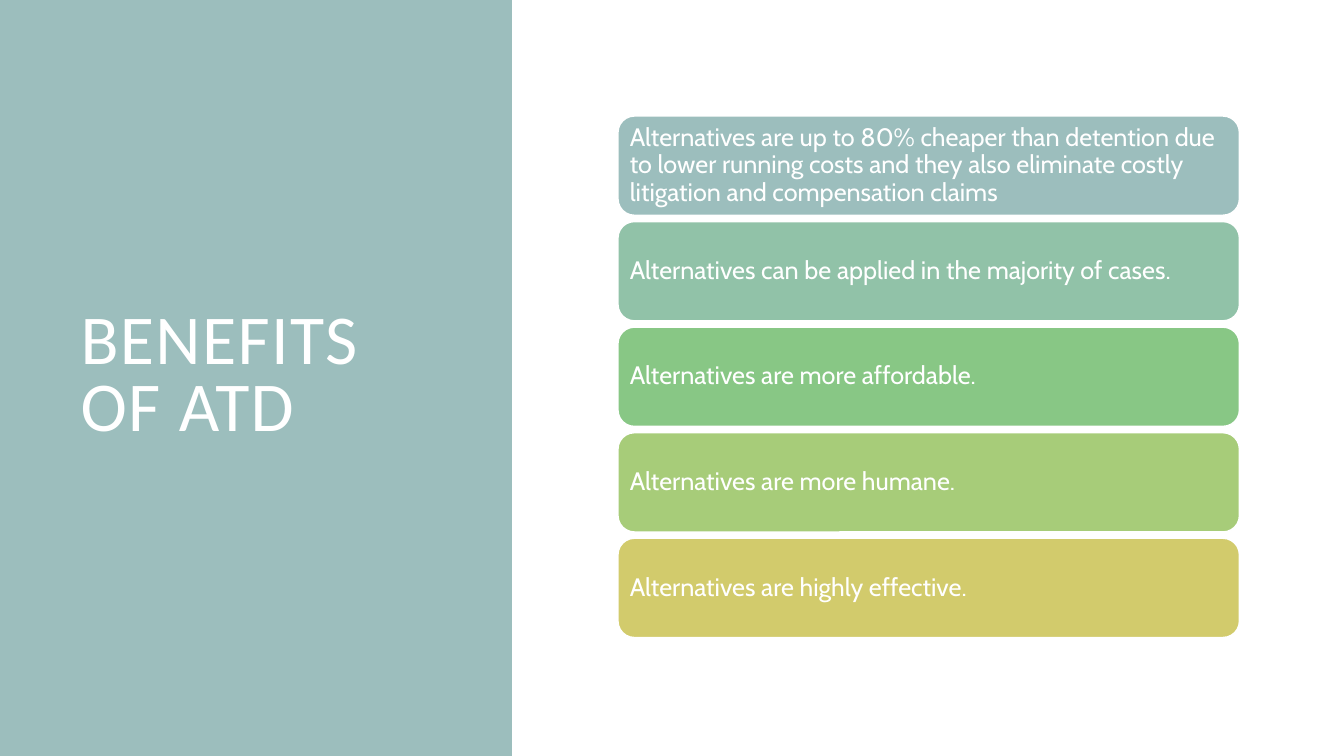
from pptx import Presentation
from pptx.dml.color import RGBColor
from pptx.enum.shapes import MSO_SHAPE
from pptx.enum.text import MSO_ANCHOR, PP_ALIGN
from pptx.util import Cm, Pt

WHITE = "FFFFFF"
TEAL = "9CBEBD"
BENEFITS = [
    ("Alternatives are up to 80% cheaper than detention due to lower running costs "
     "and they also eliminate costly litigation and compensation claims", TEAL),
    ("Alternatives can be applied in the majority of cases.", "91C2A8"),
    ("Alternatives are more affordable.", "88C785"),
    ("Alternatives are more humane.", "A7CC79"),
    ("Alternatives are highly effective.", "D2CB6C"),
]
CARD_TOP = 2.92
CARD_PITCH = 2.66


def color(hex_value):
    """Return the colour for a hex string."""
    return RGBColor.from_string(hex_value)


def add_block(slide, kind, left, top, width, height, fill):
    """Add a filled preset shape without line or shadow."""
    shape = slide.shapes.add_shape(kind, Cm(left), Cm(top), Cm(width), Cm(height))
    shape.shadow.inherit = False
    shape.fill.solid()
    shape.fill.fore_color.rgb = color(fill)
    shape.line.fill.background()
    return shape


def write_text(shape, text, font_name, size, line_spacing):
    """Write one white, left-aligned run, vertically centred in the shape."""
    frame = shape.text_frame
    frame.word_wrap = True
    frame.vertical_anchor = MSO_ANCHOR.MIDDLE
    paragraph = frame.paragraphs[0]
    paragraph.alignment = PP_ALIGN.LEFT
    paragraph.line_spacing = line_spacing
    run = paragraph.add_run()
    run.text = text
    run.font.name = font_name
    run.font.size = Pt(size)
    run.font.color.rgb = color(WHITE)
    return run


def add_title(slide, text):
    """Add the letter-spaced title on the side panel."""
    box = slide.shapes.add_textbox(Cm(1.78), Cm(1.78), Cm(9.5), Cm(15.47))
    run = write_text(box, text, "Calibri", 50, 0.8)
    run.font._element.set("spc", "100")


def add_card(slide, top, text, fill):
    """Add one rounded benefit card with a white outline."""
    card = add_block(slide, MSO_SHAPE.ROUNDED_RECTANGLE, 15.57, top, 15.67, 2.51, fill)
    card.line.color.rgb = color(WHITE)
    card.line.width = Pt(1.25)
    frame = card.text_frame
    frame.margin_left = frame.margin_right = Cm(0.18)
    frame.margin_top = frame.margin_bottom = Cm(0.18)
    write_text(card, text, "Cabin", 18, 0.9)


def main():
    """Build and save the slide."""
    presentation = Presentation()
    presentation.slide_width = Cm(33.87)
    presentation.slide_height = Cm(19.05)
    slide = presentation.slides.add_slide(presentation.slide_layouts[6])
    add_block(slide, MSO_SHAPE.RECTANGLE, 0, 0, 12.9, 19.05, TEAL)
    add_title(slide, "BENEFITS OF ATD")
    for index, (text, fill) in enumerate(BENEFITS):
        add_card(slide, CARD_TOP + index * CARD_PITCH, text, fill)
    presentation.save("out.pptx")


if __name__ == "__main__":
    main()
